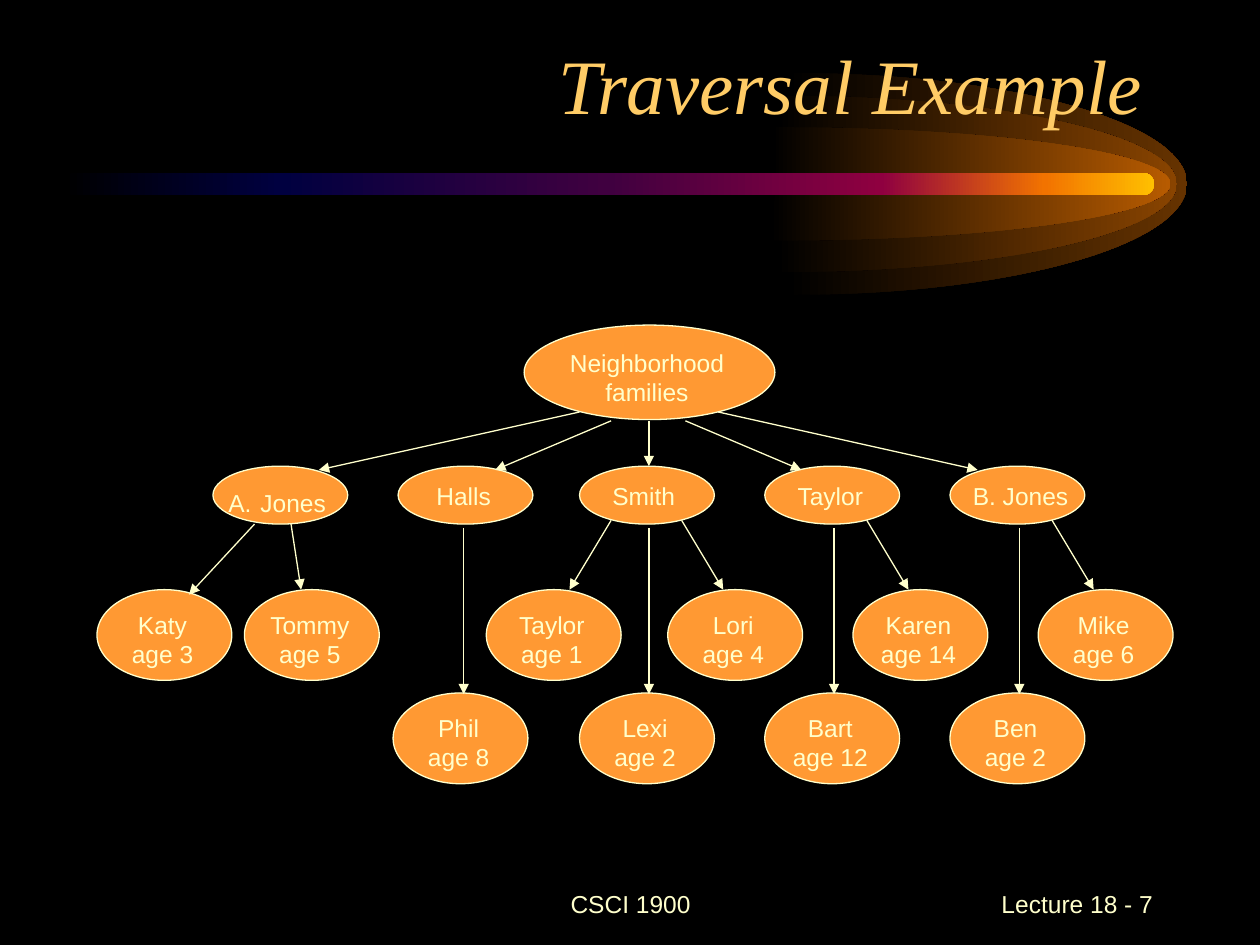
from dataclasses import dataclass

from lxml import etree
from pptx import Presentation
from pptx import util as u
from pptx.dml import color
from pptx.enum import shapes, text
from pptx.oxml import ns

COLORS = {"night": "000000", "cream": "FFFFCC", "gold": "FFCC66", "node": "FF9933"}
BODY_FONT, TITLE_FONT = "Arial", "Times New Roman"
NODE_WIDTH = 1.07
FAMILY_TOP, FAMILY_HEIGHT = 3.7, 0.46
UPPER_CHILD_TOP, LOWER_CHILD_TOP, CHILD_HEIGHT = 4.68, 5.5, 0.72


@dataclass
class Box:
    left: float
    top: float
    width: float
    height: float

    def emu(self) -> list:
        return [u.Inches(n) for n in (self.left, self.top, self.width, self.height)]


@dataclass
class Family:
    left: float
    name: str
    label_shift: float = -0.18
    space_size: int = 14


@dataclass
class Child:
    left: float
    top: float
    name: str
    age: int


@dataclass
class Arrow:
    x1: float
    y1: float
    x2: float
    y2: float


@dataclass
class Glow:
    center_x: float
    radius_y: float
    edge: str


def rgb(name: str) -> color.RGBColor:
    return color.RGBColor.from_string(COLORS[name])


def fill_gradient(shape, stops: list) -> None:
    shape.shadow.inherit = False
    shape.line.fill.background()
    shape.fill.gradient()
    shape.fill.gradient_angle = 0
    stop_list = next(shape.element.iter(ns.qn("a:gsLst")))
    for old in list(stop_list):
        stop_list.remove(old)
    for percent, hex_color in stops:
        stop = etree.SubElement(stop_list, ns.qn("a:gs"), pos=str(percent * 1000))
        etree.SubElement(stop, ns.qn("a:srgbClr"), val=hex_color)


def style_runs(paragraph, size: int, font: str, ink: str, italic: bool = False) -> None:
    for run in paragraph.runs:
        run.font.size = u.Pt(size)
        run.font.name = font
        run.font.italic = italic
        run.font.color.rgb = rgb(ink)


def draw_label(slide, box: Box, words: str, align=text.PP_ALIGN.CENTER,
               anchor=text.MSO_ANCHOR.TOP):
    frame = slide.shapes.add_textbox(*box.emu()).text_frame
    frame.word_wrap = True
    frame.vertical_anchor = anchor
    line = frame.paragraphs[0]
    line.text = words
    line.alignment = align
    style_runs(line, 14, BODY_FONT, "cream")
    return line


def draw_ellipse(slide, box: Box) -> None:
    node = slide.shapes.add_shape(shapes.MSO_SHAPE.OVAL, *box.emu())
    node.shadow.inherit = False
    node.fill.solid()
    node.fill.fore_color.rgb = rgb("node")
    node.line.color.rgb = rgb("cream")
    node.line.width = u.Pt(0.75)


def draw_family(slide, family: Family) -> None:
    draw_ellipse(slide, Box(family.left, FAMILY_TOP, NODE_WIDTH, FAMILY_HEIGHT))
    height = 0.33 if family.space_size == 14 else 0.4
    box = Box(family.left + family.label_shift, FAMILY_TOP + 0.07, 1.4, height)
    line = draw_label(slide, box, family.name)
    if family.space_size != 14:
        first, last = family.name.split(" ")
        line.text = first
        for part in (" ", last):
            line.add_run().text = part
        style_runs(line, 14, BODY_FONT, "cream")
        line.runs[1].font.size = u.Pt(family.space_size)


def draw_child(slide, child: Child) -> None:
    draw_ellipse(slide, Box(child.left, child.top, NODE_WIDTH, CHILD_HEIGHT))
    box = Box(child.left - 0.18, child.top + 0.11, 1.4, 0.57)
    draw_label(slide, box, f"{child.name}\vage {child.age}")


def draw_arrow(slide, arrow: Arrow) -> None:
    ends = [u.Inches(n) for n in (arrow.x1, arrow.y1, arrow.x2, arrow.y2)]
    link = slide.shapes.add_connector(shapes.MSO_CONNECTOR.STRAIGHT, *ends)
    link.line.color.rgb = rgb("cream")
    link.line.width = u.Pt(0.75)
    etree.SubElement(link.line._get_or_add_ln(), ns.qn("a:tailEnd"), type="triangle")
    etree.SubElement(link.element.spPr, ns.qn("a:effectLst"))


def draw_glow(slide, glow: Glow) -> None:
    x, y, rx, ry = glow.center_x, 1.46, 3.13, glow.radius_y
    left = x - 0.05
    corners = [(x, y - ry), (x + rx, y), (x, y + ry), (left, y + ry), (x, y)]
    points = [(u.Inches(px), u.Inches(py)) for px, py in corners]
    builder = slide.shapes.build_freeform(*points[0])
    builder.add_line_segments(points[1:], close=True)
    shape = builder.convert_to_shape()

    # Bend the first two sides into quarter ellipses
    bend = 0.55
    handles = [((x + bend * rx, y - ry), (x + rx, y - bend * ry)),
               ((x + rx, y + bend * ry), (x + bend * rx, y + ry))]
    sides = list(shape.element.iter(ns.qn("a:lnTo")))
    for side, pair in zip(sides, handles):
        side.tag = ns.qn("a:cubicBezTo")
        for index, (hx, hy) in enumerate(pair):
            handle = etree.Element(ns.qn("a:pt"), x=str(u.Inches(hx) - shape.left),
                                   y=str(u.Inches(hy) - shape.top))
            side.insert(index, handle)
    fill_gradient(shape, [(0, COLORS["night"]), (100, glow.edge)])


GLOWS = [Glow(6.29, 0.88, "663300"), Glow(6.21, 0.7, "894400"),
         Glow(6.16, 0.45, "B75B00")]
BEAM = [(0, "000000"), (20, "000040"), (50, "400040"), (75, "8F0040"),
        (90, "F27300"), (100, "FFBF00")]
FAMILIES = [Family(1.69, "A. Jones", -0.19, space_size=18), Family(3.16, "Halls"),
            Family(4.6, "Smith", -0.19), Family(6.07, "Taylor"),
            Family(7.54, "B. Jones", -0.14)]
CHILDREN = [
    *[Child(left, UPPER_CHILD_TOP, name, age) for left, name, age in (
        (0.77, "Katy", 3), (1.94, "Tommy", 5), (3.86, "Taylor", 1),
        (5.3, "Lori", 4), (6.77, "Karen", 14), (8.24, "Mike", 6))],
    *[Child(left, LOWER_CHILD_TOP, name, age) for left, name, age in (
        (3.12, "Phil", 8), (4.6, "Lexi", 2), (6.07, "Bart", 12), (7.54, "Ben", 2))],
]
STEMS = [3.68 + 1.47 * i for i in range(4)]
ARROWS = [
    # Root to families
    Arrow(4.6, 3.27, 2.53, 3.73), Arrow(4.85, 3.34, 3.93, 3.73),
    Arrow(5.15, 3.34, 5.15, 3.7),
    Arrow(5.44, 3.34, 6.36, 3.73), Arrow(5.7, 3.27, 7.76, 3.73),
    # Families to children
    Arrow(2.02, 4.16, 1.5, 4.72), Arrow(2.31, 4.16, 2.39, 4.68),
    Arrow(4.85, 4.13, 4.52, 4.68),
    *[Arrow(x, 4.19, x, 5.51) for x in STEMS],
    *[Arrow(x + 0.26, 4.13, x + 0.59, 4.68) for x in STEMS[1:]],
]


def main() -> None:
    deck = Presentation()
    deck.slide_width, deck.slide_height = u.Inches(10), u.Inches(7.5)
    slide = deck.slides.add_slide(deck.slide_layouts[5])
    slide.background.fill.solid()
    slide.background.fill.fore_color.rgb = rgb("night")

    # Comet
    for glow in GLOWS:
        draw_glow(slide, glow)
    beam = slide.shapes.add_shape(shapes.MSO_SHAPE.ROUNDED_RECTANGLE,
                                  *Box(0.5, 1.37, 8.66, 0.18).emu())
    beam.adjustments[0] = 0.5
    fill_gradient(beam, BEAM)

    # Footer
    middle = text.MSO_ANCHOR.MIDDLE
    draw_label(slide, Box(3.42, 6.92, 3.17, 0.5), "CSCI 1900", anchor=middle)
    draw_label(slide, Box(7.17, 6.92, 2.08, 0.5), " Lecture 18 - 7",
               text.PP_ALIGN.RIGHT, middle)

    # Title, in front of the comet
    title = slide.shapes.title
    title.left, title.top, title.width, title.height = Box(0.67, 0.25, 8.5, 0.83).emu()
    title.text_frame.text = "Traversal Example"
    title.text_frame.vertical_anchor = text.MSO_ANCHOR.BOTTOM
    heading = title.text_frame.paragraphs[0]
    heading.alignment = text.PP_ALIGN.RIGHT
    style_runs(heading, 44, TITLE_FONT, "gold", italic=True)
    title.element.getparent().append(title.element)

    # Family tree
    draw_ellipse(slide, Box(4.16, 2.58, 1.99, 0.75))
    draw_label(slide, Box(4.16, 2.71, 1.95, 0.57), "Neighborhood\vfamilies")
    for family in FAMILIES:
        draw_family(slide, family)
    for child in CHILDREN:
        draw_child(slide, child)
    for arrow in ARROWS:
        draw_arrow(slide, arrow)

    deck.save("out.pptx")


if __name__ == "__main__":
    main()
